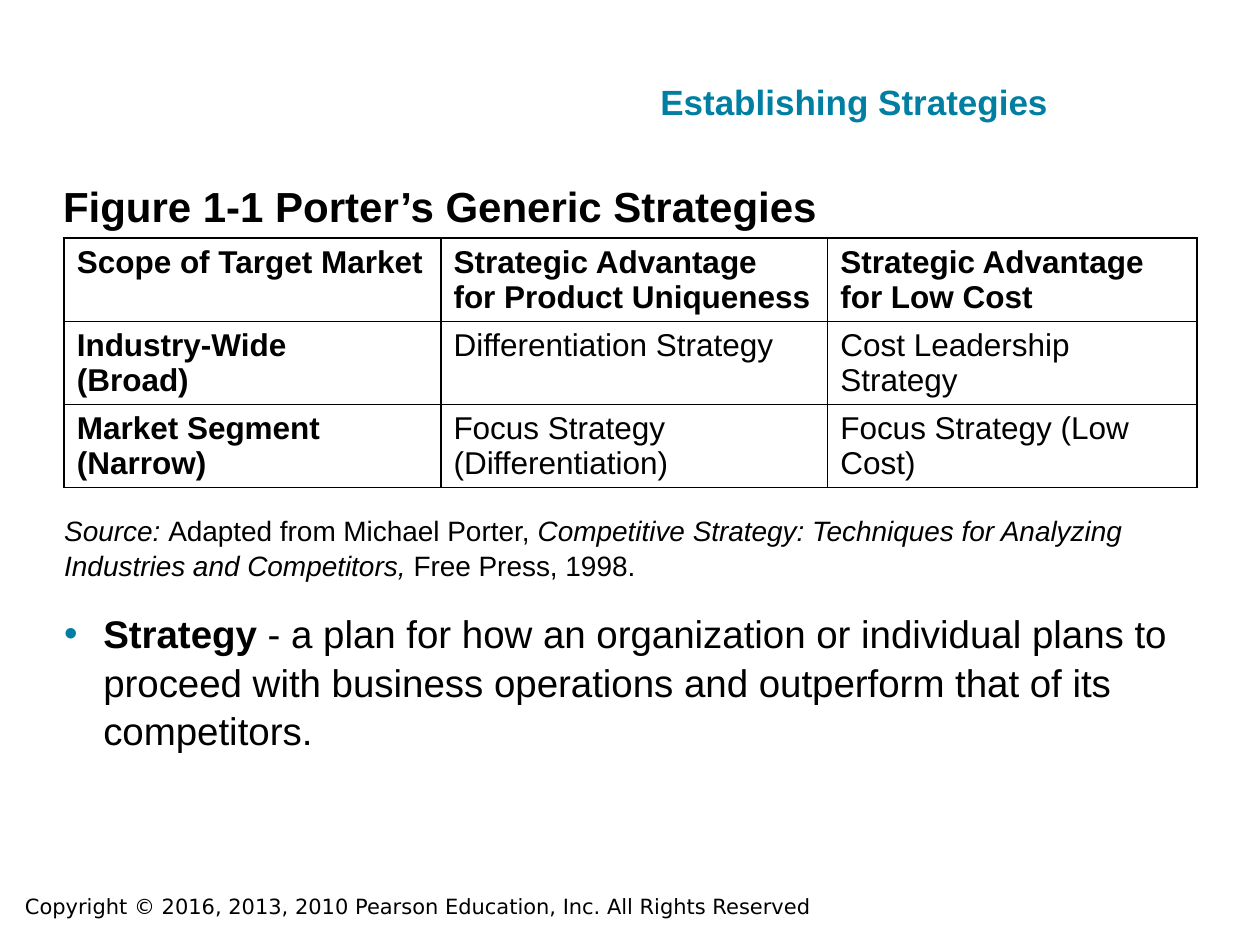
from dataclasses import dataclass

from pptx import Presentation
from pptx.dml.color import RGBColor
from pptx.enum.text import MSO_ANCHOR, MSO_AUTO_SIZE, PP_ALIGN
from pptx.oxml.ns import qn
from pptx.util import Inches, Pt
from lxml import etree

LEFT, TOP, BOTTOM = PP_ALIGN.LEFT, MSO_ANCHOR.TOP, MSO_ANCHOR.BOTTOM
NO_FIT = MSO_AUTO_SIZE.NONE
COLORS = {"text": "000000", "accent": "007FA3", "cell": "FFFFFF"}
SLIDE_W, SLIDE_H = 10, 7.5
COL_W, ROW_H = (2.99, 3.07, 2.93), 0.66


@dataclass
class Box:
    """Place and size in inches."""
    left: float
    top: float
    width: float
    height: float

    def emu(self) -> list:
        return [Inches(v) for v in (self.left, self.top, self.width, self.height)]


@dataclass
class Run:
    text: str
    size: float
    bold: bool = False
    italic: bool = False
    color: str = "text"
    font: str = "Arial"


@dataclass
class Para:
    runs: list[Run]
    before: float = 0
    bullet: str = ""
    spacing: float = 1.0


MARGIN = 0.05 * SLIDE_W
TITLE = Box(5.24, -0.23, 0.9 * SLIDE_W, 0.16 * SLIDE_H)
CAPTION = Box(MARGIN, 1.43, 0.9 * SLIDE_W, 0.43)
TABLE = Box(0.51, 1.89, sum(COL_W), 3 * ROW_H)
BODY = Box(0.51, 4.06, sum(COL_W), 0.25 * SLIDE_H)
FOOTER = Box(0.1, 7.04, 7.83, 0.04 * SLIDE_H)

# Each cell is a list of lines
CELLS = [
    [["Scope of Target Market"],
     ["Strategic Advantage", "for Product Uniqueness"],
     ["Strategic Advantage for Low Cost"]],
    [["Industry-Wide", "(Broad)"], ["Differentiation Strategy"],
     ["Cost Leadership Strategy"]],
    [["Market Segment", "(Narrow)"], ["Focus Strategy", "(Differentiation)"],
     ["Focus Strategy (Low Cost)"]],
]


def rgb(name: str) -> RGBColor:
    return RGBColor.from_string(COLORS[name])


def set_bullet(p, char: str) -> None:
    pPr = p._p.get_or_add_pPr()
    indent = Inches(0.31) if char else 0
    pPr.set("marL", str(indent))
    pPr.set("indent", str(-indent))
    if char:
        clr = etree.SubElement(pPr, qn("a:buClr"))
        etree.SubElement(clr, qn("a:srgbClr")).set("val", COLORS["accent"])
        etree.SubElement(pPr, qn("a:buChar")).set("char", char)
    else:
        etree.SubElement(pPr, qn("a:buNone"))


def write(tf, paras: list[Para]) -> None:
    for i, para in enumerate(paras):
        p = tf.paragraphs[0] if i == 0 else tf.add_paragraph()
        set_bullet(p, para.bullet)
        p.alignment, p.line_spacing = LEFT, para.spacing
        p.space_before = Pt(para.before)
        for run in para.runs:
            r = p.add_run()
            r.text = run.text
            style = {"name": run.font, "size": Pt(run.size),
                     "bold": run.bold, "italic": run.italic}
            for name, value in style.items():
                setattr(r.font, name, value)
            r.font.color.rgb = rgb(run.color)


def fill_box(sp, box: Box, paras: list[Para], anchor=TOP,
             inset: tuple[float, float] = (0, 0)) -> None:
    sp.left, sp.top, sp.width, sp.height = box.emu()
    x, y = map(Inches, inset)
    fmt = {"word_wrap": True, "auto_size": NO_FIT, "vertical_anchor": anchor,
           "margin_left": x, "margin_right": x,
           "margin_top": y, "margin_bottom": y}
    for name, value in fmt.items():
        setattr(sp.text_frame, name, value)
    write(sp.text_frame, paras)


def set_borders(cell) -> None:
    tcPr = cell._tc.get_or_add_tcPr()
    for i, side in enumerate(("lnL", "lnR", "lnT", "lnB")):
        ln = etree.Element(qn(f"a:{side}"), w=str(Pt(1)))
        fill = etree.SubElement(ln, qn("a:solidFill"))
        etree.SubElement(fill, qn("a:srgbClr")).set("val", COLORS["text"])
        tcPr.insert(i, ln)


def add_strategy_table(s) -> None:
    table = s.shapes.add_table(len(CELLS), len(COL_W), *TABLE.emu()).table
    table.horz_banding = False
    for col, width in zip(table.columns, COL_W):
        col.width = Inches(width)
    for i, row in enumerate(CELLS):
        table.rows[i].height = Inches(ROW_H)
        for j, lines in enumerate(row):
            cell = table.cell(i, j)
            cell.fill.solid()
            cell.fill.fore_color.rgb = rgb("cell")
            set_borders(cell)
            bold = i == 0 or j == 0
            write(cell.text_frame, [Para([Run(t, 18, bold)]) for t in lines])


def main() -> None:
    prs = Presentation()
    prs.slide_width, prs.slide_height = Inches(SLIDE_W), Inches(SLIDE_H)
    s = prs.slides.add_slide(prs.slide_layouts.get_by_name("Two Content"))
    title, caption, body = s.placeholders

    # Title and figure caption
    fill_box(title, TITLE, [Para([Run("Establishing Strategies", 20, True,
                                      color="accent")])], BOTTOM)
    fill_box(caption, CAPTION,
             [Para([Run("Figure 1-1 Porter’s Generic Strategies", 24, True)])])

    # Table of strategies
    add_strategy_table(s)

    # Source and definition
    fill_box(body, BODY, [
        Para([Run("Source: ", 16, italic=True),
              Run("Adapted from Michael Porter, ", 16),
              Run("Competitive Strategy: Techniques for Analyzing Industries "
                  "and Competitors, ", 16, italic=True),
              Run("Free Press, 1998.", 16)], spacing=1.05),
        Para([Run("Strategy ", 22, True),
              Run("- a plan for how an organization or individual plans to "
                  "proceed with business operations and outperform that of "
                  "its competitors.", 22)], before=15, bullet="•", spacing=1.05),
    ])

    # Copyright line
    fill_box(s.shapes.add_textbox(*FOOTER.emu()), FOOTER,
             [Para([Run("Copyright © 2016, 2013, 2010 Pearson Education, Inc. "
                        "All Rights Reserved", 12, font="DejaVu Sans")])],
             inset=(0.1, 0.05))
    prs.save("out.pptx")


if __name__ == "__main__":
    main()
